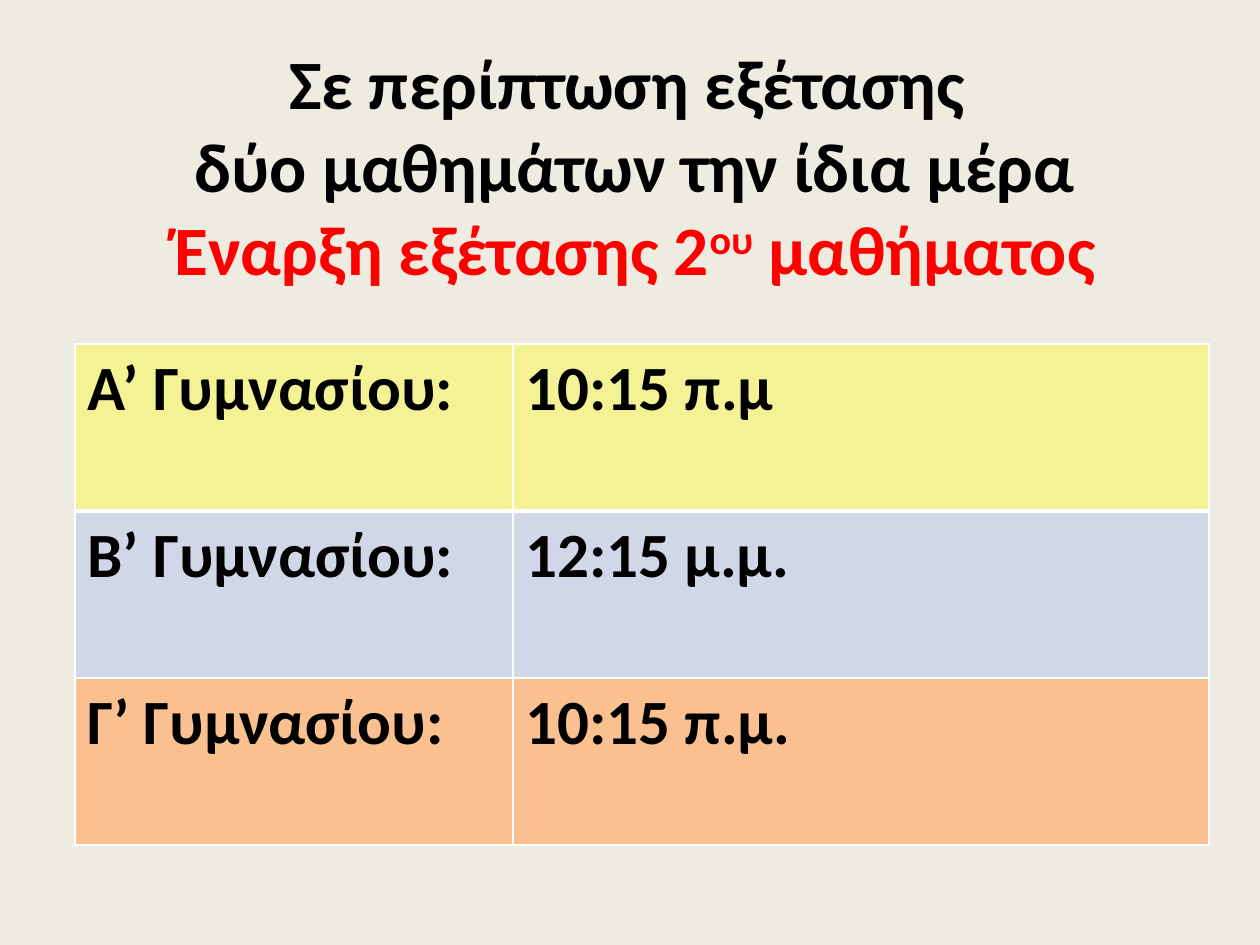
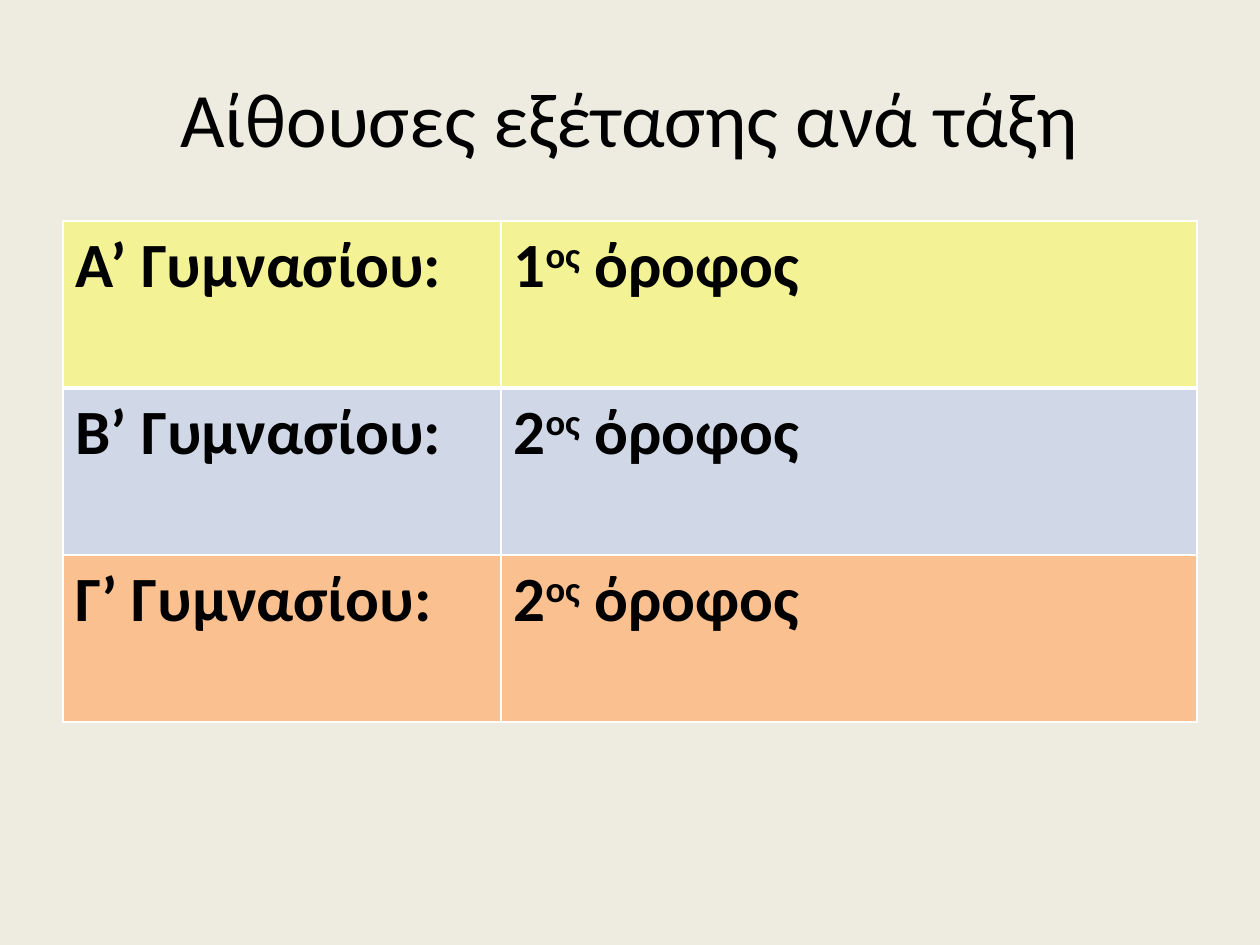
from lxml.etree import SubElement
from pptx import Presentation
from pptx.dml.color import RGBColor
from pptx.enum.text import MSO_ANCHOR, MSO_AUTO_SIZE, PP_ALIGN
from pptx.oxml import parse_xml
from pptx.oxml.ns import nsdecls, qn
from pptx.util import Emu, Pt

# Content: a text is a list of (words, format changes) spans
RAISED = {"baseline": 30000}
RED = {"color": "FF0000"}
GRADES = ["Α’ Γυμνασίου:", "Β’ Γυμνασίου:", "Γ’ Γυμνασίου:"]


def floor(number):
    return [(number, {}), ("ος", RAISED), (" όροφος", {})]


SLIDES = [
    {
        "title": [
            ("Σε περίπτωση εξέτασης \vδύο μαθημάτων την ίδια μέρα\v", {}),
            ("Έναρξη εξέτασης 2", RED),
            ("ου", RED | RAISED),
            (" μαθήματος", RED),
        ],
        "title_box": (44, 86, 1182, 157),
        "title_format": {"size": Pt(39.6), "bold": True},
        "answers": [[(time, {})] for time in ("10:15 π.μ", "12:15 μ.μ.", "10:15 π.μ.")],
        "table_at": (75, 344),
    },
    {
        "title": [("Αίθουσες εξέτασης ανά τάξη", {})],
        "title_box": (63, 38, 1134, 157),
        "title_format": {"size": Pt(44), "bold": False},
        "answers": [floor(number) for number in "122"],
        "table_at": (63, 221),
    },
]

# Shared look
PAGE_SIZE = (1260, 945)
COLUMN_WIDTHS = (438, 696)
ROW_HEIGHT = 167
BACKGROUND, TEXT_COLOR, BORDER_COLOR = "EEECE1", "000000", "FFFFFF"
ROW_FILLS = [("FFFF00", 34), ("D0D8E8", 100), ("FAC090", 100)]
FONT = "Calibri"
CELL_FORMAT = {"size": Pt(36), "bold": True}
THIN, THICK = Pt(1), Pt(3)


def px(length):
    return Emu(round(length * 914400 / 126))


def color(hex_value):
    return RGBColor.from_string(hex_value)


def write(para, spans, text_format):
    for words, changes in spans:
        for number, line in enumerate(words.split("\v")):
            if number:
                para.add_line_break()
            if not line:
                continue
            span = para.add_run()
            span.text = line
            for name, value in ({"name": FONT} | text_format).items():
                setattr(span.font, name, value)
            span.font.color.rgb = color(changes.get("color", TEXT_COLOR))
            if "baseline" in changes:
                span._r.get_or_add_rPr().set("baseline", str(changes["baseline"]))


def paint(cell, hex_value, opacity):
    cell.fill.solid()
    cell.fill.fore_color.rgb = color(hex_value)
    if opacity < 100:
        tint = cell._tc.tcPr.find(".//" + qn("a:srgbClr"))
        SubElement(tint, qn("a:alpha")).set("val", str(opacity * 1000))


def add_borders(cell, widths):
    # Border lines come before the fill in the cell properties
    for place, (side, width) in enumerate(widths.items()):
        cell._tc.tcPr.insert(place, parse_xml(
            f'<a:ln{side} {nsdecls("a")} w="{width}"><a:solidFill>'
            f'<a:srgbClr val="{BORDER_COLOR}"/></a:solidFill></a:ln{side}>'))


def add_title(page, content):
    title = page.shapes.title
    for name, value in zip(("left", "top", "width", "height"), content["title_box"]):
        setattr(title, name, px(value))
    frame = title.text_frame
    frame.word_wrap = True
    frame.auto_size = MSO_AUTO_SIZE.NONE
    frame.vertical_anchor = MSO_ANCHOR.MIDDLE
    para = frame.paragraphs[0]
    para.alignment = PP_ALIGN.CENTER
    write(para, content["title"], content["title_format"])


def add_grade_table(page, content):
    left, top = content["table_at"]
    table = page.shapes.add_table(
        len(GRADES), len(COLUMN_WIDTHS), px(left), px(top),
        px(sum(COLUMN_WIDTHS)), px(ROW_HEIGHT * len(GRADES))).table
    table.first_row = table.horz_banding = False
    for column, width in zip(table.columns, COLUMN_WIDTHS):
        column.width = px(width)
    for row, (grade, answer) in enumerate(zip(GRADES, content["answers"])):
        table.rows[row].height = px(ROW_HEIGHT)
        for column, spans in enumerate(([(grade, {})], answer)):
            cell = table.cell(row, column)
            write(cell.text_frame.paragraphs[0], spans, CELL_FORMAT)
            paint(cell, *ROW_FILLS[row])
            add_borders(cell, {
                "L": THIN, "R": THIN,
                "T": THICK if row == 1 else THIN,
                "B": THICK if row == 0 else THIN,
            })


def main():
    deck = Presentation()
    deck.slide_width, deck.slide_height = map(px, PAGE_SIZE)
    background = deck.slide_master.background.fill
    background.solid()
    background.fore_color.rgb = color(BACKGROUND)
    title_only = deck.slide_layouts.get_by_name("Title Only")
    for content in SLIDES:
        page = deck.slides.add_slide(title_only)
        add_title(page, content)
        add_grade_table(page, content)
    deck.save("out.pptx")


if __name__ == "__main__":
    main()
